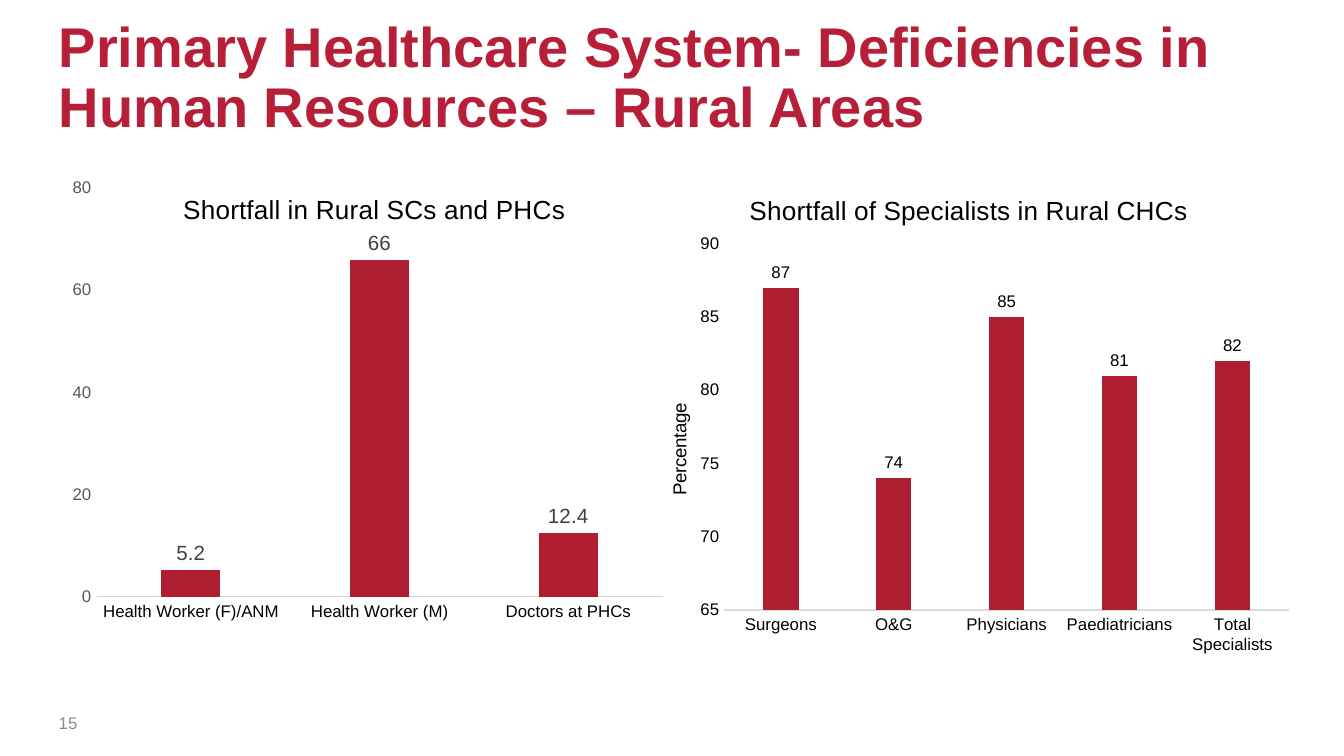
from lxml.etree import SubElement
from pptx import Presentation
from pptx.chart.data import CategoryChartData
from pptx.dml.color import RGBColor
from pptx.enum.chart import XL_CHART_TYPE, XL_LABEL_POSITION, XL_TICK_MARK
from pptx.enum.text import MSO_ANCHOR
from pptx.oxml.ns import qn
from pptx.util import Pt

HUES = {"title": "B71F38", "bar": "AF1D30", "text": "000000", "axis": "595959",
        "label": "404040", "line": "D9D9D9", "page": "8C8C8C"}

TEXTS = [
    {"text": "Primary Healthcare System- Deficiencies in Human Resources – Rural Areas",
     "box": (31.5, 7.2, 680.4, 70.6), "font": {"size": 30, "hue": "title", "bold": True},
     "gap": 0.9},
    {"text": "15", "box": (31.5, 375.8, 31, 22.3), "font": {"size": 9, "hue": "page"},
     "gap": 1},
]

CHARTS = [
    {"title": "Shortfall in Rural SCs and PHCs", "box": (31.5, 87.8, 337, 260.6),
     "cats": ["Health Worker (F)/ANM", "Health Worker (M)", "Doctors at PHCs"],
     "vals": [5.2, 66, 12.4], "scale": (0, 80, 20), "fmt": "General",
     "axis": "axis", "label": {"size": 11, "hue": "label"},
     "head": (0.19, 0.05), "plot": (0.06, 0.05, 0.9, 0.84)},
    {"title": "Shortfall of Specialists in Rural CHCs", "box": (337.7, 87.8, 360, 268.6),
     "cats": ["Surgeons", "O&G", "Physicians", "Paediatricians", "Total Specialists"],
     "vals": [87, 74, 85, 81, 82], "scale": (65, 90, 5), "fmt": "#,##0",
     "axis": "text", "label": {"size": 9, "hue": "text"},
     "head": (0.17, 0.05), "plot": (0.14, 0.16, 0.84, 0.73),
     "side": "Percentage", "spot": (0.05, 0.47)},
]


def rgb(hue):
    """Return the named colour."""
    return RGBColor.from_string(HUES[hue])


def style(font, size, hue="text", bold=False):
    """Apply the deck's typeface with a size, colour and weight."""
    for key, val in {"name": "Arial", "size": Pt(size), "bold": bold}.items():
        setattr(font, key, val)
    font.color.rgb = rgb(hue)


def place(node, rank, spots, inner=False):
    """Give a chart part a manual layout in fractions of the chart."""
    for old in node.findall(qn("c:layout")):
        node.remove(old)
    root = SubElement(node, qn("c:layout"))
    node.insert(rank, root)
    lay = SubElement(root, qn("c:manualLayout"))
    pairs = [("layoutTarget", "inner")] if inner else []
    pairs += [("xMode", "edge"), ("yMode", "edge"), *zip("xywh", spots)]
    for tag, val in pairs:
        SubElement(lay, qn(f"c:{tag}")).set("val", str(val))


def label(title, text, size, spots):
    """Write and place a chart or axis title."""
    frame = title.text_frame
    frame.text = text
    style(frame.paragraphs[0].runs[0].font, size)
    place(title._element, 1, spots)
    return frame


def write(slide, item):
    """Add one text box."""
    frame = slide.shapes.add_textbox(*map(Pt, item["box"])).text_frame
    looks = {"word_wrap": True, "vertical_anchor": MSO_ANCHOR.MIDDLE,
             "margin_left": 0, "margin_right": 0,
             "margin_top": Pt(4), "margin_bottom": Pt(4)}
    for key, val in looks.items():
        setattr(frame, key, val)
    para = frame.paragraphs[0]
    para.line_spacing = item["gap"]
    run = para.add_run()
    run.text = item["text"]
    style(run.font, **item["font"])


def draw(slide, item):
    """Add one column chart."""
    data = CategoryChartData()
    data.categories = item["cats"]
    data.add_series("Series 1", item["vals"])
    chart = slide.shapes.add_chart(
        XL_CHART_TYPE.COLUMN_CLUSTERED, *map(Pt, item["box"]), data).chart
    style(chart.font, 10)
    chart.has_legend = False
    label(chart.chart_title, item["title"], 14, item["head"])
    place(chart._chartSpace.chart.plotArea, 0, item["plot"], True)

    plot = chart.plots[0]
    for key, val in {"gap_width": 219, "overlap": -27, "vary_by_categories": False,
                     "has_data_labels": True}.items():
        setattr(plot, key, val)
    fill = plot.series[0].format.fill
    fill.solid()
    fill.fore_color.rgb = rgb("bar")
    marks = plot.data_labels
    for key, val in {"show_value": True, "position": XL_LABEL_POSITION.OUTSIDE_END,
                     "number_format": item["fmt"],
                     "number_format_is_linked": False}.items():
        setattr(marks, key, val)
    style(marks.font, **item["label"])

    cat, axis = chart.category_axis, chart.value_axis
    for part, hue in ((cat, "text"), (axis, item["axis"])):
        part.has_major_gridlines = False
        part.major_tick_mark = part.minor_tick_mark = XL_TICK_MARK.NONE
        style(part.tick_labels.font, 9, hue)
    cat.format.line.color.rgb = rgb("line")
    cat.format.line.width = Pt(0.75)
    axis.format.line.fill.background()
    axis.minimum_scale, axis.maximum_scale, axis.major_unit = item["scale"]
    if "side" in item:
        frame = label(axis.axis_title, item["side"], 10, item["spot"])
        frame._txBody.find(qn("a:bodyPr")).set("rot", "-5400000")


def main():
    """Build the slide and save it."""
    deck = Presentation()
    deck.slide_width, deck.slide_height = Pt(720), Pt(405)
    slide = deck.slides.add_slide(deck.slide_layouts[6])
    for item in TEXTS:
        write(slide, item)
    for item in CHARTS:
        draw(slide, item)
    deck.save("out.pptx")


if __name__ == "__main__":
    main()
